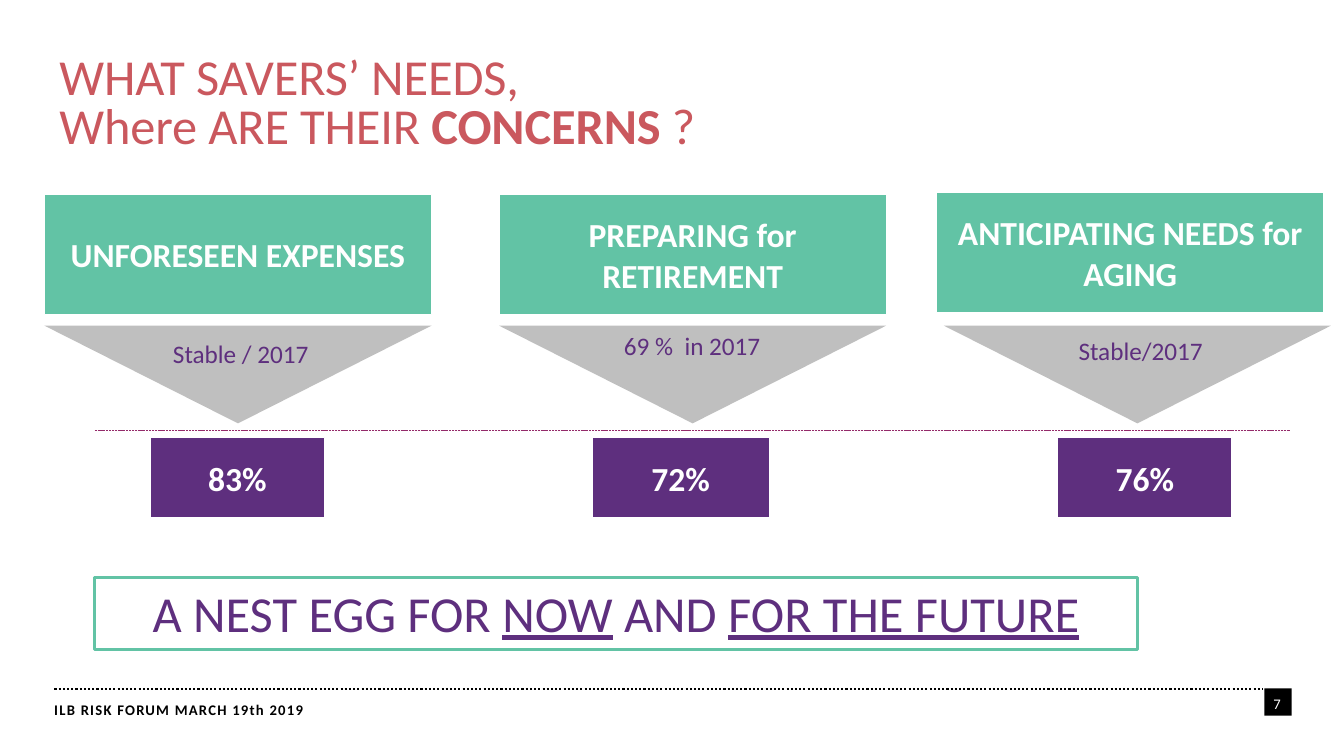
"""Build the slide on what savers need and what concerns them."""
from dataclasses import dataclass

from lxml.etree import SubElement
from pptx import Presentation
from pptx.dml.color import RGBColor
from pptx.enum.dml import MSO_LINE
from pptx.enum.shapes import MSO_CONNECTOR, MSO_SHAPE
from pptx.enum.text import MSO_ANCHOR, PP_ALIGN
from pptx.oxml.ns import qn
from pptx.shapes.autoshape import Shape
from pptx.slide import Slide
from pptx.util import Inches, Pt

WIDTH, HEIGHT = Inches(13.33), Inches(7.5)
FONT = "Calibri"
COLOURS = {
    "title": "CA585E",
    "green": "62C3A5",
    "purple": "5E2F7E",
    "grey": "BFBFBF",
    "plum": "942B6A",
    "black": "000000",
    "white": "FFFFFF",
}


@dataclass(frozen=True)
class Area:
    """A rectangle in percent of the slide's width and height."""

    left: float
    top: float
    width: float
    height: float

    def lengths(self) -> tuple[int, int, int, int]:
        """Return left, top, width and height in slide units."""
        return across(self.left), down(self.top), across(self.width), down(self.height)


@dataclass(frozen=True)
class Span:
    """A stretch of text with its own emphasis."""

    text: str
    bold: bool = False
    underline: bool = False


@dataclass(frozen=True)
class Concern:
    """One column: a heading, an arrow with a trend and a share of savers."""

    heading: str
    heading_left: float
    heading_top: float
    arrow_left: float
    trend: str
    trend_area: Area
    share: str
    share_left: float
    share_width: float


CONCERNS = (
    Concern("UNFORESEEN EXPENSES", 3.3, 25.73, 3.3,
            " Stable / 2017", Area(9.45, 44.13, 16.5, 5.33), "83%", 11.18, 12.98),
    Concern("PREPARING for RETIREMENT", 37.13, 25.73, 37.13,
            "69 %  in 2017", Area(42.69, 43.07, 17.63, 5.33), "72%", 44.04, 13.2),
    Concern("ANTICIPATING NEEDS for AGING", 69.69, 25.47, 70.22,
            " Stable/2017", Area(77.12, 43.73, 15.08, 5.33), "76%", 78.69, 12.98),
)


def across(share: float) -> int:
    """Turn a percentage of the slide's width into a length."""
    return round(WIDTH * share / 100)


def down(share: float) -> int:
    """Turn a percentage of the slide's height into a length."""
    return round(HEIGHT * share / 100)


def colour(name: str) -> RGBColor:
    """Look up a named colour."""
    return RGBColor.from_string(COLOURS[name])


def write(box: Shape, *spans: Span, size: float, ink: str,
          align: PP_ALIGN = PP_ALIGN.CENTER, anchor: MSO_ANCHOR = MSO_ANCHOR.TOP,
          line_spacing: float | None = None, tracking: int | None = None) -> None:
    """Write one paragraph of spans into a box."""
    frame = box.text_frame
    frame.word_wrap = True
    frame.vertical_anchor = anchor
    para = frame.paragraphs[0]
    para.alignment = align
    para.line_spacing = line_spacing
    for index, line in enumerate(spans):
        for part, text in enumerate(line.text.split("\n")):
            if part:
                para.add_line_break()
            span = para.add_run()
            span.text = text
            font = span.font
            font.name, font.size = FONT, Pt(size)
            font.bold, font.underline = line.bold, line.underline
            font.color.rgb = colour(ink)
            if tracking is not None:
                font._rPr.set("spc", str(tracking))


def add_text(page: Slide, area: Area) -> Shape:
    """Add an empty text box."""
    return page.shapes.add_textbox(*area.lengths())


def add_block(page: Slide, area: Area, kind: MSO_SHAPE = MSO_SHAPE.RECTANGLE,
              fill: str | None = None, line: str | None = None,
              weight: float = 1) -> Shape:
    """Add a flat preset shape with an optional fill and outline."""
    block = page.shapes.add_shape(kind, *area.lengths())
    block.shadow.inherit = False
    if fill:
        block.fill.solid()
        block.fill.fore_color.rgb = colour(fill)
    else:
        block.fill.background()
    if line:
        block.line.color.rgb = colour(line)
        block.line.width = Pt(weight)
    else:
        block.line.fill.background()
    return block


def add_rule(page: Slide, start: float, end: float, top: float,
             ink: str, weight: float, dash: MSO_LINE) -> None:
    """Add a horizontal dashed rule."""
    rule = page.shapes.add_connector(
        MSO_CONNECTOR.STRAIGHT, across(start), down(top), across(end), down(top))
    rule.line.color.rgb = colour(ink)
    rule.line.width = Pt(weight)
    rule.line.dash_style = dash
    SubElement(rule._element.spPr, qn("a:effectLst"))


def add_concern(page: Slide, concern: Concern) -> None:
    """Draw one column of the slide."""
    heading = add_block(page, Area(concern.heading_left, concern.heading_top, 28.81, 15.87),
                        fill="green", line="white")
    share = add_block(page, Area(concern.share_left, 57.87, concern.share_width, 10.67),
                      fill="purple", line="white")
    for box, text in ((heading, concern.heading), (share, concern.share)):
        write(box, Span(text, bold=True), size=24, ink="white", anchor=MSO_ANCHOR.MIDDLE)
    arrow = add_block(page, Area(concern.arrow_left, 43.07, 28.81, 12.93),
                      MSO_SHAPE.ISOSCELES_TRIANGLE, fill="grey")
    arrow.rotation = 180
    write(add_text(page, concern.trend_area), Span(concern.trend), size=18, ink="purple")


def add_footer(page: Slide) -> None:
    """Draw the footer rule, the event name and the page number."""
    add_rule(page, 4.05, 94, 91.2, "black", 1.5, MSO_LINE.ROUND_DOT)
    add_block(page, Area(94.07, 91.07, 2.03, 3.6), fill="black")
    write(add_text(page, Area(93.1, 91.2, 3.83, 5.33)), Span("7"), size=10.5, ink="white")
    write(add_text(page, Area(3.3, 92, 68.42, 3.6)),
          Span("ILB RISK FORUM MARCH 19th 2019", bold=True),
          size=10.5, ink="black", align=PP_ALIGN.LEFT, tracking=90)


def main() -> None:
    """Build the deck and save it."""
    deck = Presentation()
    deck.slide_width, deck.slide_height = WIDTH, HEIGHT
    page = deck.slides.add_slide(deck.slide_layouts[6])
    add_footer(page)
    write(add_text(page, Area(3.68, 6.53, 88.07, 14.93)),
          Span("WHAT SAVERS’ NEEDS, \nWhere ARE THEIR "),
          Span("CONCERNS", bold=True), Span(" ?"),
          size=36, ink="title", align=PP_ALIGN.LEFT, anchor=MSO_ANCHOR.MIDDLE,
          line_spacing=0.81, tracking=-10)
    add_rule(page, 7.05, 96.02, 56.93, "plum", 0.5, MSO_LINE.SQUARE_DOT)
    for concern in CONCERNS:
        add_concern(page, concern)
    write(add_block(page, Area(7.05, 76.4, 77.57, 9.47), line="green", weight=2.25),
          Span("A NEST EGG FOR "), Span("NOW", underline=True),
          Span(" AND "), Span("FOR THE FUTURE", underline=True),
          size=36, ink="purple")
    deck.save("out.pptx")


if __name__ == "__main__":
    main()
